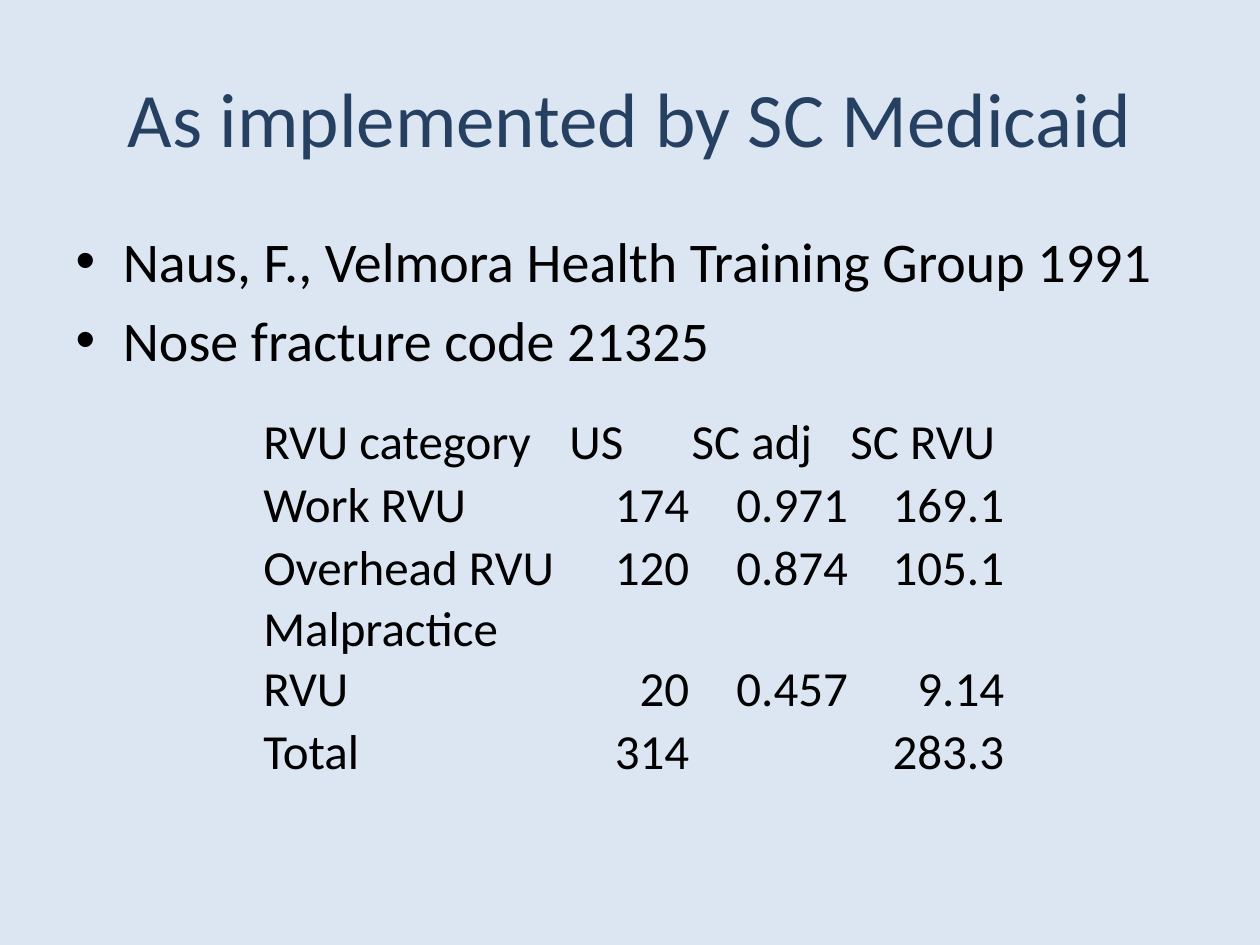
"""Build the slide on the SC Medicaid RVU adjustment."""
from dataclasses import dataclass

from pptx import Presentation
from pptx.dml.color import RGBColor
from pptx.enum.text import MSO_ANCHOR, PP_ALIGN
from pptx.oxml.ns import qn
from pptx.util import Inches, Pt

BACKGROUND = RGBColor(0xDC, 0xE6, 0xF2)
NAVY = RGBColor(0x25, 0x40, 0x61)
BLACK = RGBColor(0, 0, 0)
FONT = "Calibri"
NO_STYLE_NO_GRID = "{2D5ABB26-0587-4C30-8999-92F81FD0307C}"
COLUMN_WIDTHS = (2.43, 0.97, 1.26, 1.24)
ROW_HEIGHT = 0.5


@dataclass(frozen=True)
class RvuRow:
    category: str
    us: str
    adjustment: str
    sc_rvu: str

    def values(self) -> tuple[str, ...]:
        return self.category, self.us, self.adjustment, self.sc_rvu


ROWS = (
    RvuRow("RVU category", "US", "SC adj", "SC RVU"),
    RvuRow("Work RVU", "174", "0.971", "169.1"),
    RvuRow("Overhead RVU", "120", "0.874", "105.1"),
    RvuRow("Malpractice RVU", "20", "0.457", "9.14"),
    RvuRow("Total", "314", "", "283.3"),
)


def format_text(tf, size: int, color: RGBColor, align: PP_ALIGN) -> None:
    for p in tf.paragraphs:
        p.alignment = align
        for r in p.runs:
            r.font.name = FONT
            r.font.size = Pt(size)
            r.font.color.rgb = color


def place(sp, left: float, top: float, width: float, height: float) -> None:
    sp.left, sp.top = Inches(left), Inches(top)
    sp.width, sp.height = Inches(width), Inches(height)


def fill_cell(cell, text: str, align: PP_ALIGN) -> None:
    cell.fill.background()
    cell.margin_left = cell.margin_right = cell.margin_top = Inches(0.01)
    cell.margin_bottom = 0
    cell.vertical_anchor = MSO_ANCHOR.BOTTOM
    cell.text_frame.text = text
    format_text(cell.text_frame, 28, BLACK, align)


def add_rvu_table(s, rows: tuple[RvuRow, ...], left: float, top: float) -> None:
    frame = s.shapes.add_table(
        len(rows), len(COLUMN_WIDTHS), Inches(left), Inches(top),
        Inches(sum(COLUMN_WIDTHS)), Inches(ROW_HEIGHT * len(rows)))
    table = frame.table
    table.first_row = table.horz_banding = False
    next(frame.element.iter(qn("a:tableStyleId"))).text = NO_STYLE_NO_GRID
    for column, width in zip(table.columns, COLUMN_WIDTHS):
        column.width = Inches(width)
    for i, row in enumerate(rows):
        table.rows[i].height = Inches(ROW_HEIGHT)
        for j, text in enumerate(row.values()):
            align = PP_ALIGN.RIGHT if i and j else PP_ALIGN.LEFT
            fill_cell(table.cell(i, j), text, align)


def main() -> None:
    prs = Presentation()
    prs.slide_width, prs.slide_height = Inches(10), Inches(7.5)
    s = prs.slides.add_slide(prs.slide_layouts[1])
    s.background.fill.solid()
    s.background.fill.fore_color.rgb = BACKGROUND

    title, body = s.placeholders
    place(title, 0.5, 0.3, 9, 1.25)
    title.text_frame.text = "As implemented by SC Medicaid"
    format_text(title.text_frame, 44, NAVY, PP_ALIGN.CENTER)

    place(body, 0.5, 1.75, 9, 4.95)
    body.text_frame.text = ("Naus, F., Velmora Health Training Group 1991\n"
                            "Nose fracture code 21325")
    format_text(body.text_frame, 32, BLACK, PP_ALIGN.LEFT)

    add_rvu_table(s, ROWS, 2.08, 3.25)
    prs.save("out.pptx")


if __name__ == "__main__":
    main()
